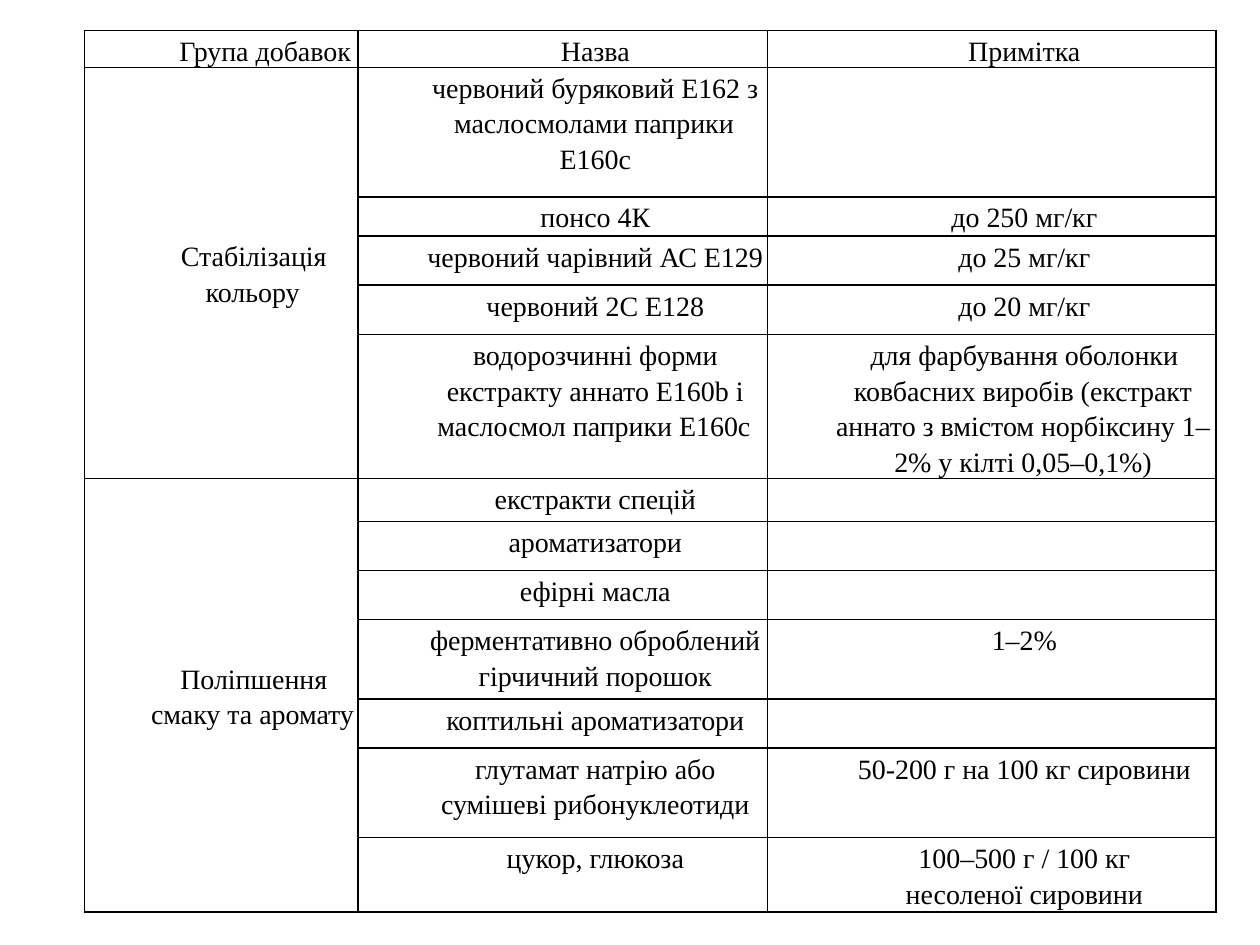
from lxml.etree import SubElement
from pptx import Presentation
from pptx.dml.color import RGBColor
from pptx.enum.text import MSO_ANCHOR, PP_ALIGN
from pptx.oxml.ns import qn
from pptx.util import Inches, Pt

BLACK = RGBColor(0, 0, 0)
WHITE = RGBColor(255, 255, 255)
FONT = "Times New Roman"
COLUMN_WIDTHS = [2.17, 3.25, 3.56]
ROW_HEIGHTS = [0.27, 1.03, 0.31, 0.39, 0.39, 0.99, 0.34, 0.39, 0.39, 0.63, 0.39, 0.71, 0.59]
HEADINGS = ["Група добавок", "Назва", "Примітка"]
GROUPS = {
    "Стабілізація кольору": [
        ("червоний буряковий Е162 з маслосмолами паприки\nЕ160с", ""),
        ("понсо 4К", "до 250 мг/кг"),
        ("червоний чарівний АС Е129", "до 25 мг/кг"),
        ("червоний 2С Е128", "до 20 мг/кг"),
        ("водорозчинні форми\nекстракту аннато Е160b і маслосмол паприки Е160с",
         "для фарбування оболонки ковбасних виробів (екстракт аннато "
         "з вмістом норбіксину 1–2% у кілті 0,05–0,1%)"),
    ],
    "Поліпшення смаку та аромату": [
        ("екстракти спецій", ""),
        ("ароматизатори", ""),
        ("ефірні масла", ""),
        ("ферментативно оброблений\nгірчичний порошок", "1–2%"),
        ("коптильні ароматизатори", ""),
        ("глутамат натрію або\nсумішеві рибонуклеотиди", "50-200 г на 100 кг сировини"),
        ("цукор, глюкоза", "100–500 г / 100 кг\nнесоленої сировини"),
    ],
}


def style_cell(cell):
    """Give a cell thin black borders, a white fill and narrow margins."""
    properties = cell._tc.get_or_add_tcPr()
    for side in ("lnL", "lnR", "lnT", "lnB"):
        border = SubElement(properties, qn(f"a:{side}"), w=str(Pt(1)))
        colour = SubElement(border, qn("a:solidFill"))
        SubElement(colour, qn("a:srgbClr"), val=str(BLACK))
    cell.fill.solid()
    cell.fill.fore_color.rgb = WHITE
    cell.margin_left = cell.margin_right = cell.margin_top = Inches(0.01)
    cell.margin_bottom = 0


def write_text(cell, text, first_line=0.02, anchor=MSO_ANCHOR.TOP):
    """Write centred, indented paragraphs, one for each line of text."""
    cell.vertical_anchor = anchor
    if not text:
        return
    cell.text = text
    for paragraph in cell.text_frame.paragraphs:
        paragraph.alignment = PP_ALIGN.CENTER
        paragraph.line_spacing = 1.15
        indents = paragraph._p.get_or_add_pPr()
        indents.set("marL", str(Inches(0.5)))
        indents.set("indent", str(Inches(first_line)))
        font = paragraph.runs[0].font
        font.name = FONT
        font.size = Pt(16)
        font.color.rgb = BLACK


def add_grid(slide):
    """Add the empty bordered table."""
    table = slide.shapes.add_table(
        len(ROW_HEIGHTS), len(COLUMN_WIDTHS),
        Inches(0.67), Inches(0.24), Inches(sum(COLUMN_WIDTHS)), Inches(sum(ROW_HEIGHTS)),
    ).table
    table.first_row = table.horz_banding = False
    for column, width in zip(table.columns, COLUMN_WIDTHS):
        column.width = Inches(width)
    for row, height in zip(table.rows, ROW_HEIGHTS):
        row.height = Inches(height)
    for cell in table.iter_cells():
        style_cell(cell)
    return table


def fill_group(table, top, group, additives):
    """Merge the group cell and list its additives beside it."""
    group_cell = table.cell(top, 0)
    group_cell.merge(table.cell(top + len(additives) - 1, 0))
    write_text(group_cell, group, anchor=MSO_ANCHOR.MIDDLE)
    group_cell.margin_left = group_cell.margin_right = group_cell.margin_top = 0
    for row, (additive, note) in enumerate(additives, top):
        write_text(table.cell(row, 1), additive)
        write_text(table.cell(row, 2), note)


def main():
    """Build and save the slide of food additives."""
    presentation = Presentation()
    presentation.slide_width = Inches(10)
    presentation.slide_height = Inches(7.5)
    slide = presentation.slides.add_slide(presentation.slide_layouts[6])
    additives_table = add_grid(slide)
    for column, heading in enumerate(HEADINGS):
        write_text(additives_table.cell(0, column), heading, first_line=0.02 if column else 0.2)
    top = 1
    for group, additives in GROUPS.items():
        fill_group(additives_table, top, group, additives)
        top += len(additives)
    presentation.save("out.pptx")


if __name__ == "__main__":
    main()
